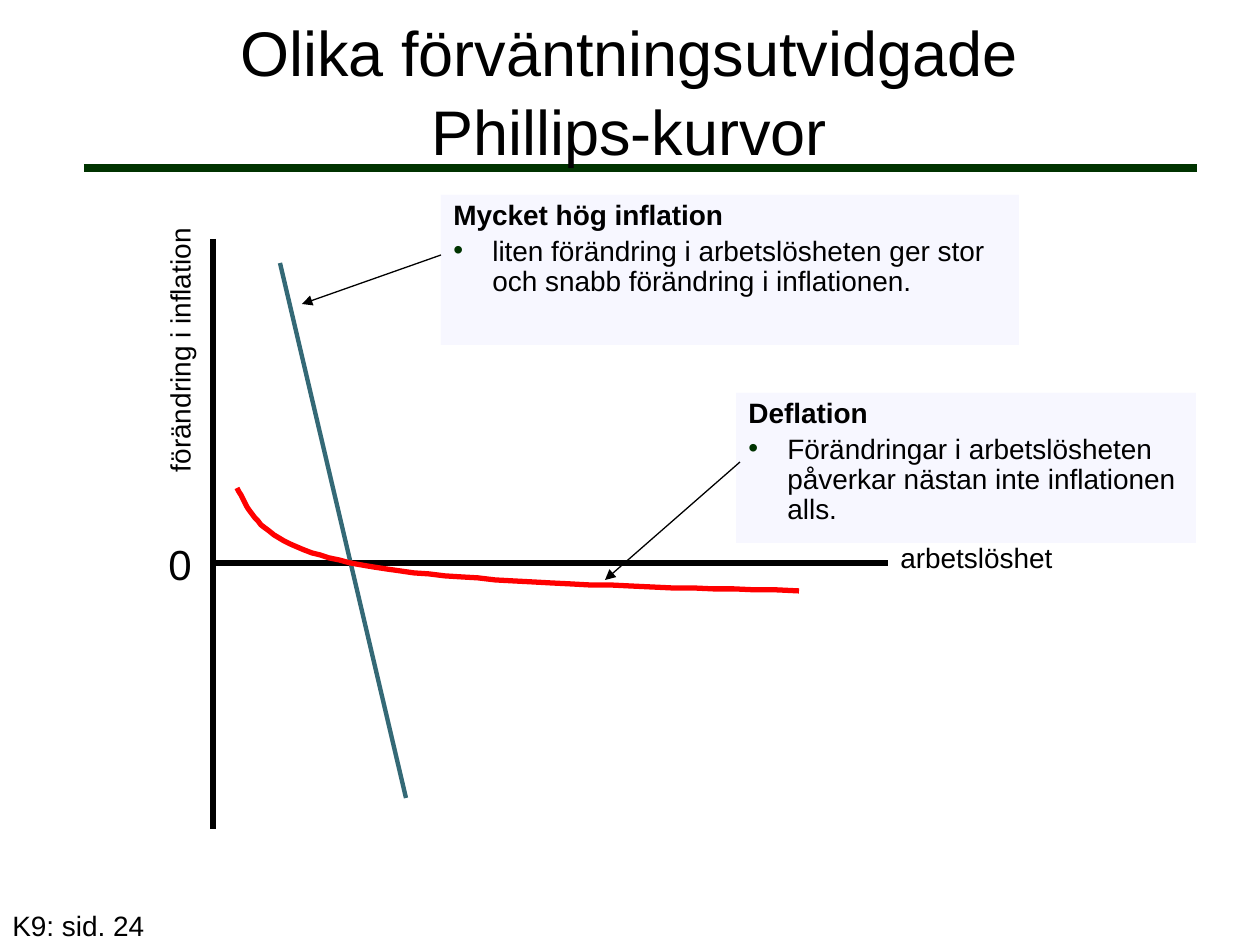
"""Build the slide on expectations-augmented Phillips curves."""
from lxml import etree
from pptx import Presentation
from pptx.dml.color import RGBColor
from pptx.enum.shapes import MSO_CONNECTOR, MSO_SHAPE
from pptx.enum.text import MSO_ANCHOR, PP_ALIGN
from pptx.oxml.ns import qn
from pptx.util import Emu, Pt

STRAIGHT, RECT = MSO_CONNECTOR.STRAIGHT, MSO_SHAPE.RECTANGLE
TOP, MIDDLE = MSO_ANCHOR.TOP, MSO_ANCHOR.MIDDLE
LEFT, CENTER = PP_ALIGN.LEFT, PP_ALIGN.CENTER
SCALE = 914400 / 126
FONT, BLACK, GREEN, WHITE = "Arial", "000000", "003300", "FFFFFF"

TITLE = "Olika förväntningsutvidgade Phillips-kurvor"
RULE = (84, 168, 1197, 168, GREEN, 4.5, False)
LINES = [
    (213, 239, 213, 829, BLACK, 3, False),
    (213, 563, 956, 563, BLACK, 3, False),
    (441, 255, 302, 304, BLACK, 0.75, True),
    (740, 462, 605, 580, BLACK, 0.75, True),
    (280, 263, 406, 798, "346976", 2.5, False),
]
LABELS = [
    ("arbetslöshet", (888, 534, 219, 47), 16, WHITE, 0, True),
    ("0", (156, 532, 49, 63), 24, None, 0, False),
    ("K9: sid. 24", (0, 902, 262, 47), 16, None, 0, True),
    ("förändring i inflation", (40, 321, 280, 47), 16, WHITE, 270, True),
]
NOTES = [
    ("Mycket hög inflation",
     "liten förändring i arbetslösheten ger stor och snabb förändring i inflationen.",
     (441, 195, 578, 150)),
    ("Deflation",
     "Förändringar i arbetslösheten påverkar nästan inte inflationen alls.",
     (736, 393, 460, 150)),
]
CURVE = [
    ((237, 488), (252, 518), (267, 548), (361, 565)),
    ((361, 565), (455, 582), (626, 587), (799, 591)),
]
STEPS = 24


def px(num):
    return Emu(round(num * SCALE))


def color(code):
    return RGBColor.from_string(code)


def add_line(slide, x1, y1, x2, y2, code, width, arrow):
    line = slide.shapes.add_connector(STRAIGHT, px(x1), px(y1), px(x2), px(y2))
    line.line.color.rgb = color(code)
    line.line.width = Pt(width)
    if arrow:
        etree.SubElement(line.line._get_or_add_ln(), qn("a:tailEnd"), type="triangle")
    etree.SubElement(line._element.spPr, qn("a:effectLst"))


def add_box(slide, box, fill=None, anchor=TOP, wrap=True):
    place = [px(num) for num in box]
    if fill:
        shape = slide.shapes.add_shape(RECT, *place)
        shape.shadow.inherit = False
        shape.fill.solid()
        shape.fill.fore_color.rgb = color(fill)
        shape.line.fill.background()
    else:
        shape = slide.shapes.add_textbox(*place)
    shape.text_frame.word_wrap = wrap
    shape.text_frame.vertical_anchor = anchor
    return shape


def add_run(para, text, size, bold=False, align=LEFT):
    para.alignment = align
    run = para.add_run()
    run.text = text
    run.font.name = FONT
    run.font.size = Pt(size)
    run.font.bold = bold
    run.font.color.rgb = color(BLACK)


def add_bullet(para):
    props = para._p.get_or_add_pPr()
    props.set("marL", str(px(39)))
    props.set("indent", str(-px(39)))
    tint = etree.SubElement(props, qn("a:buClr"))
    etree.SubElement(tint, qn("a:srgbClr"), val=GREEN)
    etree.SubElement(props, qn("a:buFont"), typeface=FONT)
    etree.SubElement(props, qn("a:buChar"), char="•")


def add_note(slide, head, body, box):
    shape = add_box(slide, box, "CCCCFF")
    tint = shape.fill._xPr.find(".//" + qn("a:srgbClr"))
    etree.SubElement(tint, qn("a:alpha"), val="15000")
    frame = shape.text_frame
    first, second = frame.paragraphs[0], frame.add_paragraph()
    for para in (first, second):
        para.line_spacing = 0.9
        para.space_before = para.space_after = Pt(1.6)
    add_run(first, head, 16, True)
    add_run(second, body, 16)
    add_bullet(second)


def bezier(ends, t):
    s = 1 - t
    parts = (s ** 3, 3 * s * s * t, 3 * s * t * t, t ** 3)
    return tuple(sum(w * pt[axis] for w, pt in zip(parts, ends)) for axis in (0, 1))


def add_curve(slide):
    dots = [bezier(ends, i / STEPS) for ends in CURVE for i in range(1, STEPS + 1)]
    pen = slide.shapes.build_freeform(*CURVE[0][0], scale=SCALE)
    pen.add_line_segments(dots, close=False)
    curve = pen.convert_to_shape()
    curve.shadow.inherit = False
    curve.fill.background()
    curve.line.color.rgb = color("FF0000")
    curve.line.width = Pt(3)


def main():
    deck = Presentation()
    deck.slide_width, deck.slide_height = px(1260), px(945)
    slide = deck.slides.add_slide(deck.slide_layouts[6])
    add_line(slide, *RULE)
    title = add_box(slide, (192, 10, 874, 158), anchor=MIDDLE).text_frame.paragraphs[0]
    title.line_spacing = 1.05
    add_run(title, TITLE, 36, align=CENTER)
    for line in LINES[:2]:
        add_line(slide, *line)
    for text, box, size, fill, turn, wrap in LABELS:
        label = add_box(slide, box, fill, wrap=wrap)
        label.rotation = turn
        add_run(label.text_frame.paragraphs[0], text, size)
    for note in NOTES:
        add_note(slide, *note)
    for line in LINES[2:]:
        add_line(slide, *line)
    add_curve(slide)
    deck.save("out.pptx")


if __name__ == "__main__":
    main()
